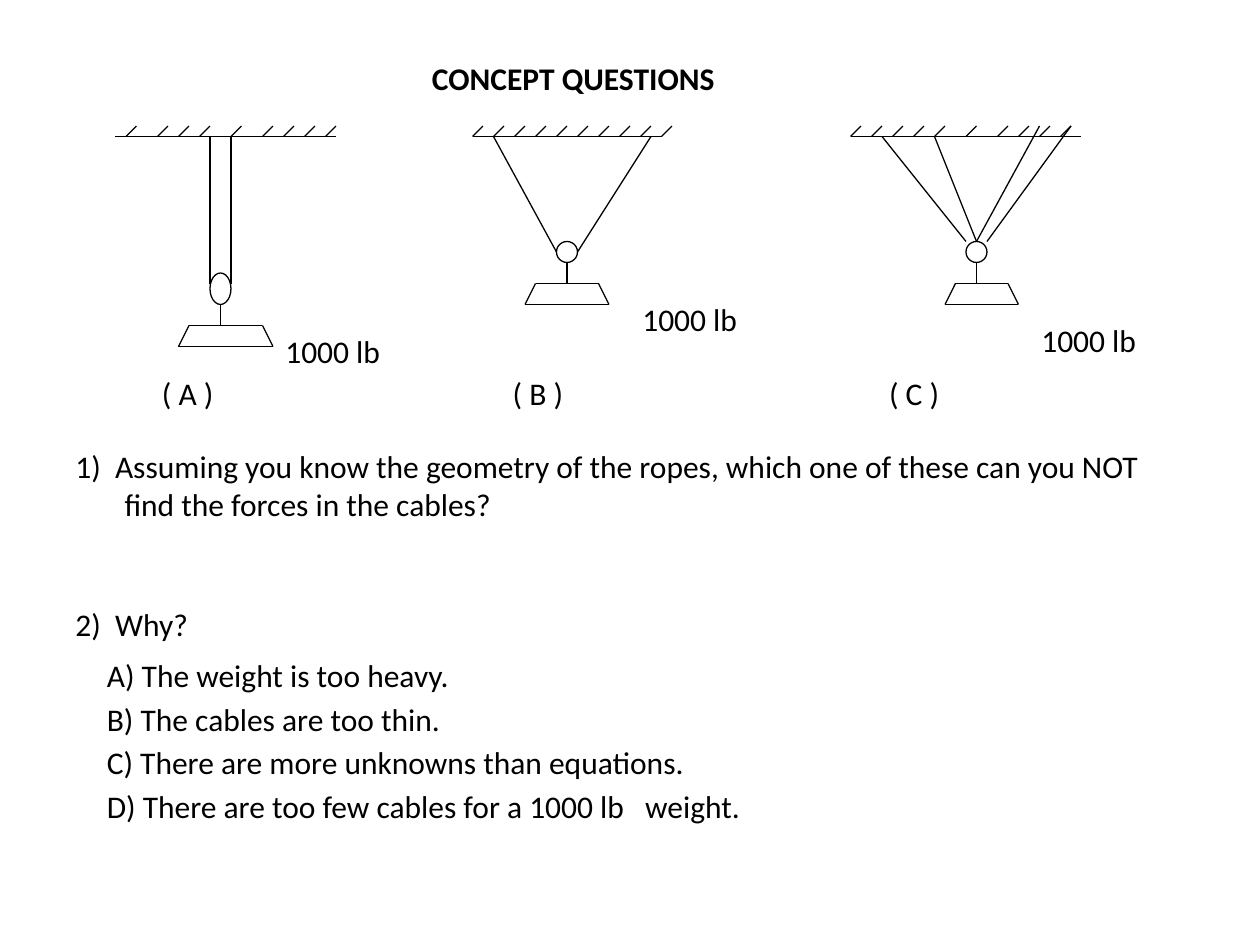
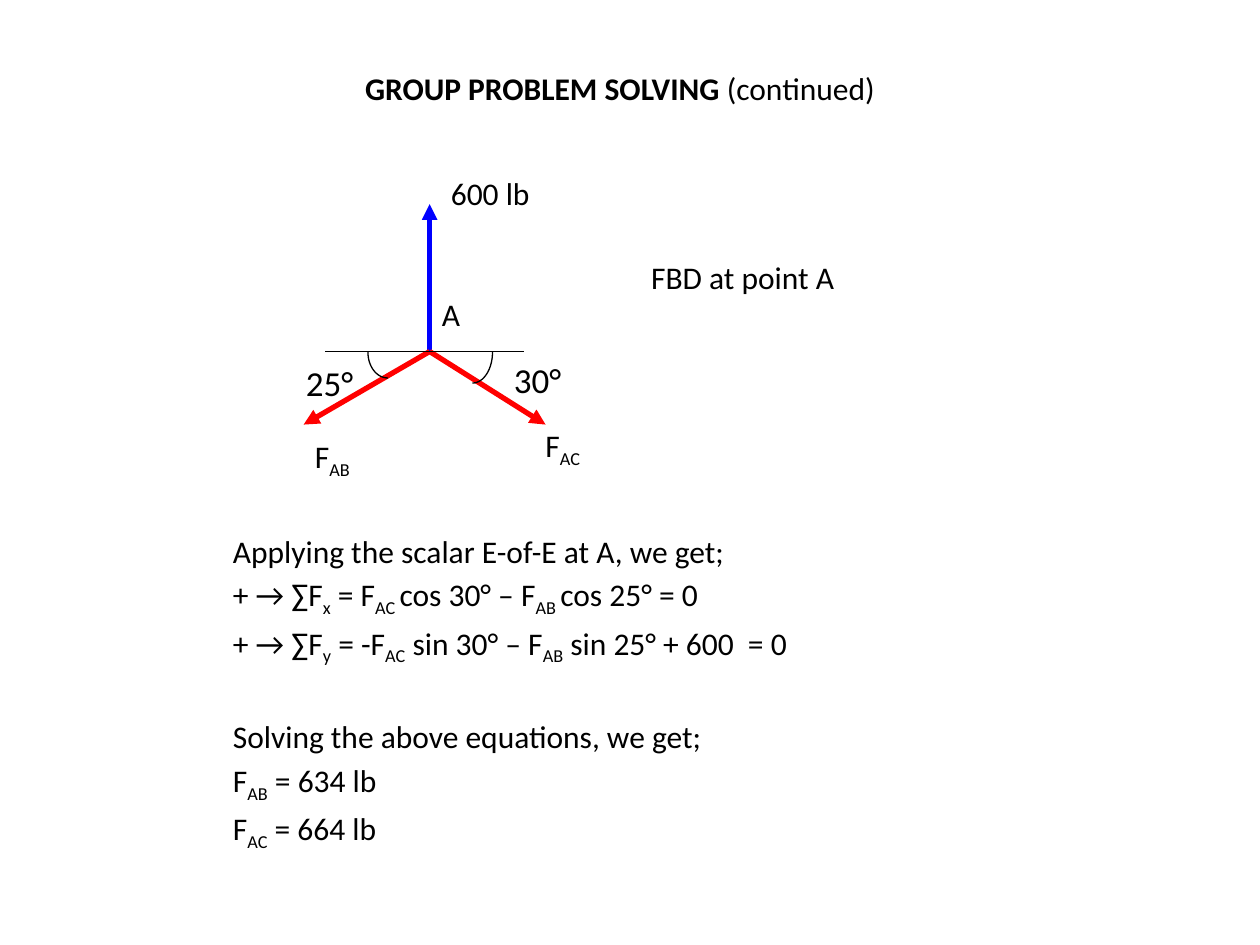
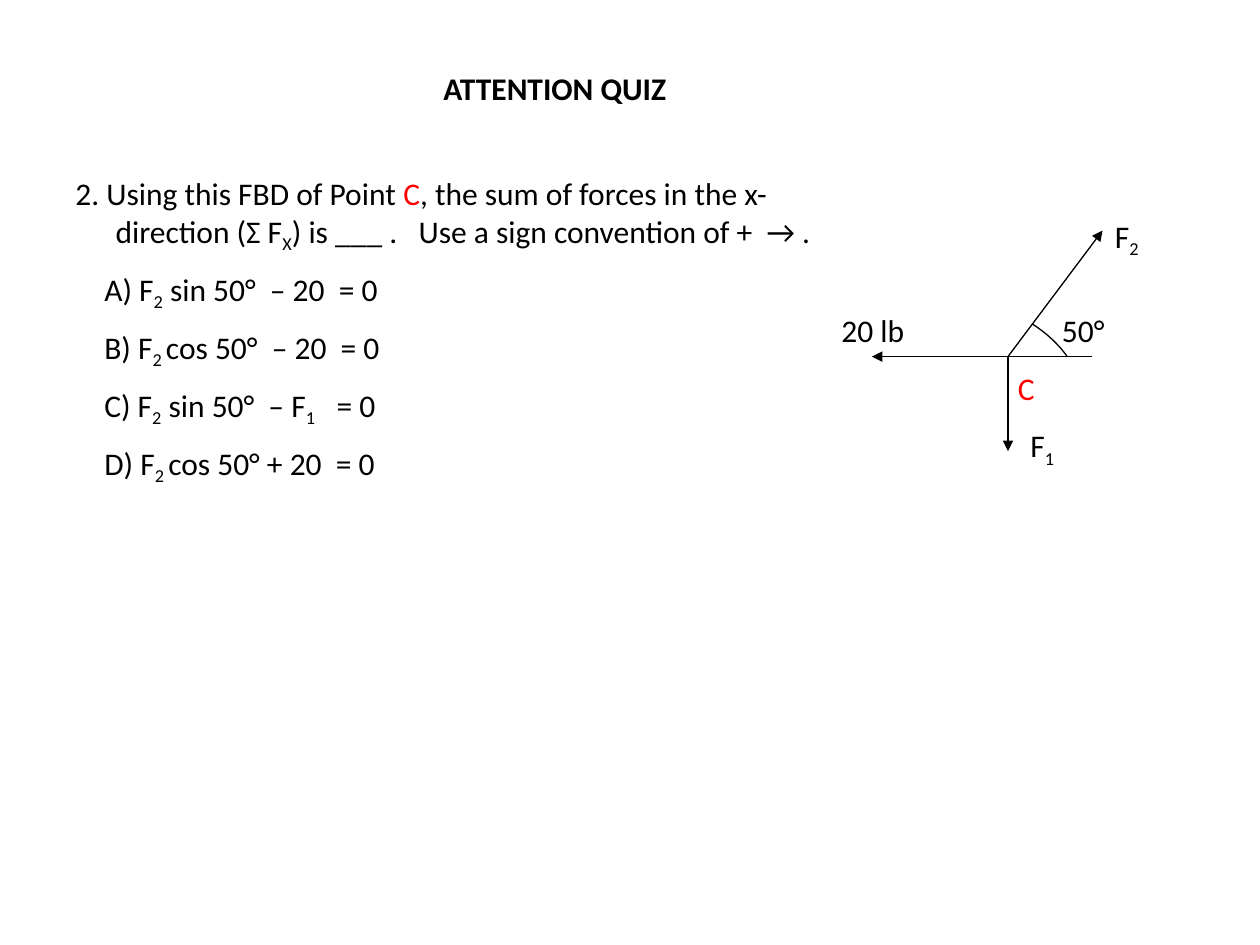
from dataclasses import dataclass

from lxml import etree
from pptx import Presentation
from pptx.dml.color import RGBColor
from pptx.enum.shapes import MSO_CONNECTOR, MSO_SHAPE
from pptx.enum.text import PP_ALIGN
from pptx.oxml.ns import qn
from pptx.util import Inches, Pt

BLACK = RGBColor(0x00, 0x00, 0x00)
WHITE = RGBColor(0xFF, 0xFF, 0xFF)
RED = RGBColor(0xFF, 0x00, 0x00)
BLUE = RGBColor(0x00, 0x00, 0xFF)
FONT = "Calibri"
BODY_SIZE = 18
ANGLE_SIZE = 20
THIN = 0.75
THICK = 3
STRAIGHT = MSO_CONNECTOR.STRAIGHT
OVAL = MSO_SHAPE.OVAL
LEFT = PP_ALIGN.LEFT
CENTER = PP_ALIGN.CENTER
PLAIN, BOLD, SUB, ACCENT = range(4)
CELLS_PER_INCH = 12


@dataclass
class Rig:
    letter: str
    letter_x: float
    left: int
    beam: int
    hatches: list
    ropes: list
    pulley: tuple
    weight: tuple
    label: tuple


RIGS = [
    Rig("A", 3.25, 11, 21, [1, 4, 6, 8, 11, 14, 16, 18, 20],
        [((9, 1), (9, 15)), ((11, 1), (11, 15))],
        (9, 14, 3), (7, 14), (15, 19)),
    Rig("B", 2.65, 45, 18, list(range(0, 20, 2)),
        [((2, 1), (8, 12)), ((17, 1), (10, 12))],
        (8, 11, 2), (6, 12), (15, 16)),
    Rig("C", 2.5, 81, 22, [0, 2, 4, 6, 8, 11, 14, 16, 18, 20],
        [((3, 1), (11, 11)), ((8, 1), (12, 11)),
         ((18, 0), (12, 11)), ((21, 0), (13, 11))],
        (11, 11, 2), (10, 15), (17, 18)),
]


def marked(text):
    return [(part, SUB if i % 2 else PLAIN)
            for i, part in enumerate(text.split("|")) if part]


def add_text(slide, box, paragraphs, size=BODY_SIZE, align=LEFT, gaps=0,
             hanging=0, indent=0, color=BLACK):
    frame = slide.shapes.add_textbox(*map(Inches, box)).text_frame
    frame.word_wrap = True
    for i, parts in enumerate(paragraphs):
        paragraph = frame.paragraphs[0] if i == 0 else frame.add_paragraph()
        paragraph.alignment = align
        if i:
            paragraph.space_before = Pt(gaps[i - 1])
        margin = hanging if i == 0 and hanging else indent
        properties = paragraph._p.get_or_add_pPr()
        properties.set("marL", str(Inches(margin)))
        properties.set("indent", str(-Inches(margin) if margin == hanging else 0))
        for text, look in marked(parts) if isinstance(parts, str) else parts:
            run = paragraph.add_run()
            run.text = text
            run.font.name = FONT
            run.font.size = Pt(size)
            run.font.bold = look == BOLD
            run.font.color.rgb = RED if look == ACCENT else color
            if look == SUB:
                run._r.get_or_add_rPr().set("baseline", "-25000")


def add_title(slide, box, parts, align=LEFT):
    add_text(slide, box, [parts], align=align)


def add_line(slide, start, end, color=BLACK, width=THIN, arrow=False):
    line = slide.shapes.add_connector(STRAIGHT, *map(Inches, (*start, *end)))
    line.line.color.rgb = color
    line.line.width = Pt(width)
    if arrow:
        etree.SubElement(line.line._get_or_add_ln(), qn("a:tailEnd"), type="triangle")
    etree.SubElement(line._element.spPr, qn("a:effectLst"))


def add_arc(slide, controls, steps=16):
    points = []
    for step in range(steps + 1):
        t = step / steps
        weights = ((1 - t) ** 3, 3 * t * (1 - t) ** 2, 3 * t * t * (1 - t), t ** 3)
        points.append(tuple(Inches(sum(w * c[axis] for w, c in zip(weights, controls)))
                            for axis in (0, 1)))
    builder = slide.shapes.build_freeform(*points[0])
    builder.add_line_segments(points[1:], close=False)
    arc = builder.convert_to_shape()
    arc.shadow.inherit = False
    arc.fill.background()
    arc.line.color.rgb = BLACK
    arc.line.width = Pt(THIN)


def add_rig(slide, rig, top):
    def at(x, y):
        return (rig.left + x) / CELLS_PER_INCH, top + y / CELLS_PER_INCH

    def stroke(start, end):
        add_line(slide, at(*start), at(*end))

    stroke((0, 1), (rig.beam, 1))
    for x in rig.hatches:
        stroke((x + 1, 0), (x, 1))
    for rope in rig.ropes:
        stroke(*rope)

    pulley_x, pulley_y, pulley_height = rig.pulley
    pulley = slide.shapes.add_shape(
        OVAL, *map(Inches, at(pulley_x, pulley_y)),
        Inches(2 / CELLS_PER_INCH), Inches(pulley_height / CELLS_PER_INCH))
    pulley.shadow.inherit = False
    pulley.fill.solid()
    pulley.fill.fore_color.rgb = WHITE
    pulley.line.color.rgb = BLACK
    pulley.line.width = Pt(THIN)

    stem_top = pulley_y + pulley_height
    weight_top = stem_top + 2
    stroke((pulley_x + 1, stem_top), (pulley_x + 1, weight_top))
    near, far = rig.weight
    corners = [(near, weight_top), (far, weight_top),
               (far + 1, weight_top + 2), (near - 1, weight_top + 2)]
    for start, end in zip(corners, corners[1:] + corners[:1]):
        stroke(start, end)

    add_text(slide, (*at(*rig.label), 1.1, 0.4), ["1000 lb"])
    add_text(slide, (*at(rig.letter_x, 23), 0.8, 0.4), [f"( {rig.letter} )"])


def build_concept_questions(slide):
    add_title(slide, (3.33, 0.42, 4.25, 0.4), [("CONCEPT QUESTIONS", BOLD)])
    for rig in RIGS:
        add_rig(slide, rig, top=1)
    add_text(slide, (0.5, 3.5, 8.83, 0.71), [
        "1)  Assuming you know the geometry of the ropes, which one of these "
        "can you NOT find the forces in the cables?"], hanging=0.39)
    add_text(slide, (0.5, 4.75, 1.5, 0.4), ["2)  Why?"])
    add_text(slide, (0.58, 5.16, 7, 2.34), [
        "A) The weight is too heavy.",
        "B) The cables are too thin.",
        "C) There are more unknowns than equations.",
        "D) There are too few cables for a 1000 lb   weight.",
    ], gaps=[3.2] * 3, indent=0.17)


def add_joint_diagram(slide, x, y):
    joint = (x, y)
    for dx, dy, color in [(0, -1.17, BLUE), (-1, 0.58, RED), (0.92, 0.58, RED)]:
        add_line(slide, joint, (x + dx, y + dy), color, THICK, arrow=True)
    add_line(slide, (x - 0.83, y), (x + 0.75, y))
    for start, middle, side, depth, bend in [
            (-0.33, -0.42, -0.49, 0.21, 0.12), (0.34, 0.43, 0.5, 0.25, 0.14)]:
        add_arc(slide, [(x + start, y + depth), (x + middle, y + depth),
                        (x + side, y + bend), (x + side, y)])
    for label, dx, dy, width, size in [
            ("30°", 0.57, 0.01, 0.7, ANGLE_SIZE),
            ("25°", -1.08, 0.03, 0.7, ANGLE_SIZE),
            ("600 lb", 0.07, -1.46, 1.04, BODY_SIZE),
            ("F|AB|", -1.01, 0.63, 0.69, BODY_SIZE),
            ("F|AC|", 0.82, 0.54, 0.69, BODY_SIZE),
            ("A", 0, -0.5, 0.44, BODY_SIZE),
            ("FBD at point A", 1.66, -0.79, 2.27, BODY_SIZE)]:
        add_text(slide, (x + dx, y + dy, width, 0.4), [label], size)


def build_group_problem(slide):
    add_title(slide, (2.42, 0.5, 5, 0.4),
              [("GROUP PROBLEM SOLVING ", BOLD), ("(continued)", PLAIN)], CENTER)
    add_joint_diagram(slide, 3.41, 2.79)
    add_text(slide, (1.75, 4.17, 6.92, 2.58), [
        "Applying the scalar E-of-E at A, we get;",
        "+ → ∑F|x| = F|AC |cos 30° – F|AB |cos 25° = 0",
        "+ → ∑F|y| = -F|AC| sin 30° – F|AB| sin 25° + 600  = 0",
        "Solving the above equations, we get;",
        "F|AB| = 634 lb",
        "F|AC| = 664 lb",
    ], gaps=[3.2, 3.2, 29, 3.2, 3.2])


def add_point_diagram(slide, x, y):
    add_line(slide, (x + 0.67, y), (x - 1.08, y), arrow=True)
    for dx, dy in [(0.75, -1), (0, 0.75)]:
        add_line(slide, (x, y), (x + dx, y + dy), arrow=True)
    add_arc(slide, [(x + 0.19, y - 0.26), (x + 0.3, y - 0.19),
                    (x + 0.4, y - 0.1), (x + 0.47, y)])
    for label, dx, dy, width, color in [
            ("F|2|", 0.75, -1.16, 0.5, BLACK),
            ("20 lb", -1.42, -0.41, 1, BLACK),
            ("F|1|", 0.08, 0.5, 0.58, BLACK),
            ("C", -0.02, 0.05, 0.34, RED),
            ("50°", 0.33, -0.41, 0.58, BLACK)]:
        add_text(slide, (x + dx, y + dy, width, 0.4), [label], color=color)


def build_attention_quiz(slide):
    add_title(slide, (3.42, 0.5, 3.33, 0.4), [("ATTENTION QUIZ", BOLD)])
    add_point_diagram(slide, 8, 2.83)
    question = [("2. Using this FBD of Point ", PLAIN), ("C", ACCENT)] + marked(
        ", the sum of forces in the x-direction (Σ F|X|) is ___ .   "
        "Use a sign convention of +  → .")
    add_text(slide, (0.5, 1.33, 6.17, 2.52), [
        question,
        "A) F|2| sin 50°  – 20  = 0",
        "B) F|2 |cos 50°  – 20  = 0",
        "C) F|2| sin 50°  – F|1|   = 0",
        "D) F|2 |cos 50° + 20  = 0",
    ], gaps=[8.6] * 4, hanging=0.32, indent=0.23)


def main():
    deck = Presentation()
    deck.slide_width = Inches(10)
    deck.slide_height = Inches(7.5)
    for build in (build_concept_questions, build_group_problem, build_attention_quiz):
        build(deck.slides.add_slide(deck.slide_layouts[6]))
    deck.save("out.pptx")


if __name__ == "__main__":
    main()
